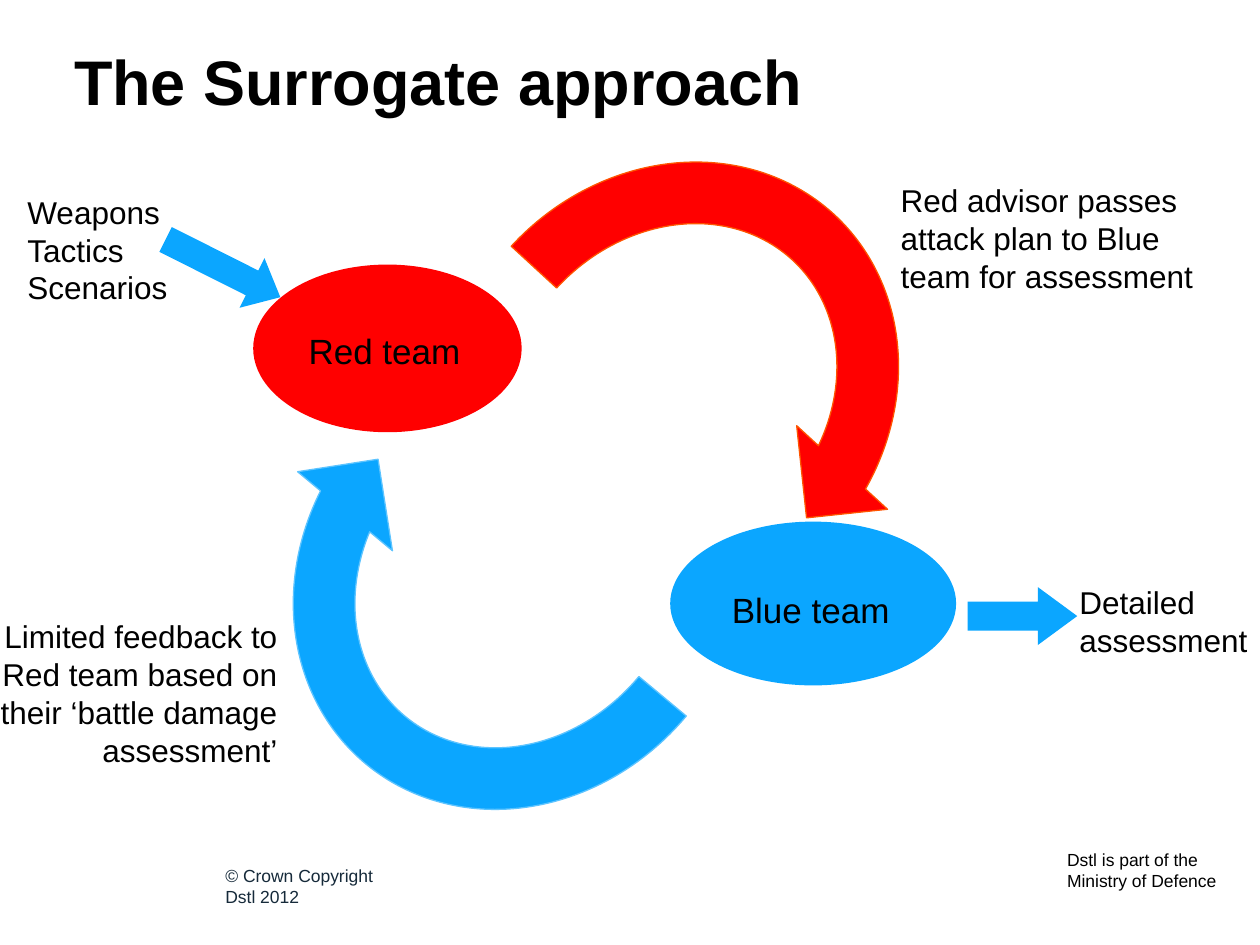
from pptx import Presentation
from pptx.dml.color import RGBColor
from pptx.enum.shapes import MSO_SHAPE as Preset
from pptx.enum.text import MSO_ANCHOR as Anchor, PP_ALIGN as Align
from pptx.util import Pt

BLACK = RGBColor(0x00, 0x00, 0x00)
NAVY = RGBColor(0x16, 0x2A, 0x3A)
RED = RGBColor(0xFF, 0x00, 0x00)
ORANGE = RGBColor(0xFF, 0x54, 0x00)
BLUE = RGBColor(0x0B, 0xA6, 0xFF)
LIGHT_BLUE = RGBColor(0x5D, 0xC4, 0xFF)
FONT = "Arial"
INSET = (7.2, 3.6)

# Preset, (left, top, width, height), fill, line, rotation, adjustments
SHAPES = [
    (Preset.OVAL, (144.7, 151.2, 153.4, 95.8), RED, None, 0, ()),
    (Preset.OVAL, (383, 298.1, 163.4, 93.6), BLUE, None, 0, ()),
    (Preset.RIGHT_ARROW, (553, 335.5, 62.6, 33.1), BLUE, None, 0, (0.5, 0.68)),
    (Preset.RIGHT_ARROW, (90.7, 137.5, 73.4, 31.7), BLUE, None, 26.7, (0.5, 0.57)),
    (Preset.CIRCULAR_ARROW, (156.2, 174.2, 282.2, 311.8), BLUE, LIGHT_BLUE, 219.8, ()),
    (Preset.CIRCULAR_ARROW, (241.9, 68.4, 282.2, 311.8), RED, ORANGE, 42.6, ()),
]

# Paragraphs, (left, top, width, height), size, then any options
TEXTS = [
    (["The Surrogate approach"], (35.3, 20.9, 635.8, 50.4), 36, {"bold": True}),
    (["Red team"], (169.2, 185, 123.1, 31.7), 20, {}),
    (["Blue team"], (411.1, 332.6, 113, 31.7), 20, {}),
    (["Red advisor passes attack plan to Blue team for assessment"],
     (507.6, 100.1, 181.4, 72.7), 18, {}),
    (["Limited feedback to Red team based on their ‘battle damage assessment’"],
     (-14.4, 349.2, 180, 94.3), 18, {"align": Align.RIGHT}),
    (["Detailed assessment"], (609.8, 329.8, 117.4, 51.1), 18, {}),
    (["Weapons", "Tactics", "Scenarios"], (8.6, 106.6, 113, 72.7), 18, {}),
    (["Dstl is part of the Ministry of Defence"],
     (609.8, 485.3, 93.6, 41.8), 10, {"inset": (0, 0)}),
    (["© Crown Copyright", "Dstl 2012"], (121.7, 491, 102.2, 31.7), 10,
     {"color": NAVY, "wrap": False}),
]


def add_figure(page, preset, place, fill, line, rotation, adjustments):
    shape = page.shapes.add_shape(preset, *map(Pt, place))
    shape.shadow.inherit = False
    shape.rotation = rotation
    for index, value in enumerate(adjustments):
        shape.adjustments[index] = value
    shape.fill.solid()
    shape.fill.fore_color.rgb = fill
    if line is None:
        shape.line.fill.background()
    else:
        shape.line.color.rgb = line
        shape.line.width = Pt(0.75)


def add_text(page, lines, place, size, bold=False, color=BLACK,
             align=Align.LEFT, inset=INSET, wrap=True):
    frame = page.shapes.add_textbox(*map(Pt, place)).text_frame
    frame.word_wrap = wrap
    frame.vertical_anchor = Anchor.TOP
    frame.margin_left = frame.margin_right = Pt(inset[0])
    frame.margin_top = frame.margin_bottom = Pt(inset[1])
    for index, line in enumerate(lines):
        para = frame.add_paragraph() if index else frame.paragraphs[0]
        para.alignment = align
        span = para.add_run()
        span.text = line
        span.font.name = FONT
        span.font.size = Pt(size)
        span.font.bold = bold
        span.font.color.rgb = color


def main():
    deck = Presentation()
    deck.slide_width, deck.slide_height = Pt(720), Pt(540)
    page = deck.slides.add_slide(deck.slide_layouts[6])

    # Teams and the arrows between them
    for figure in SHAPES:
        add_figure(page, *figure)

    # Title, labels and footer
    for lines, place, size, options in TEXTS:
        add_text(page, lines, place, size, **options)

    deck.save("out.pptx")


if __name__ == "__main__":
    main()
